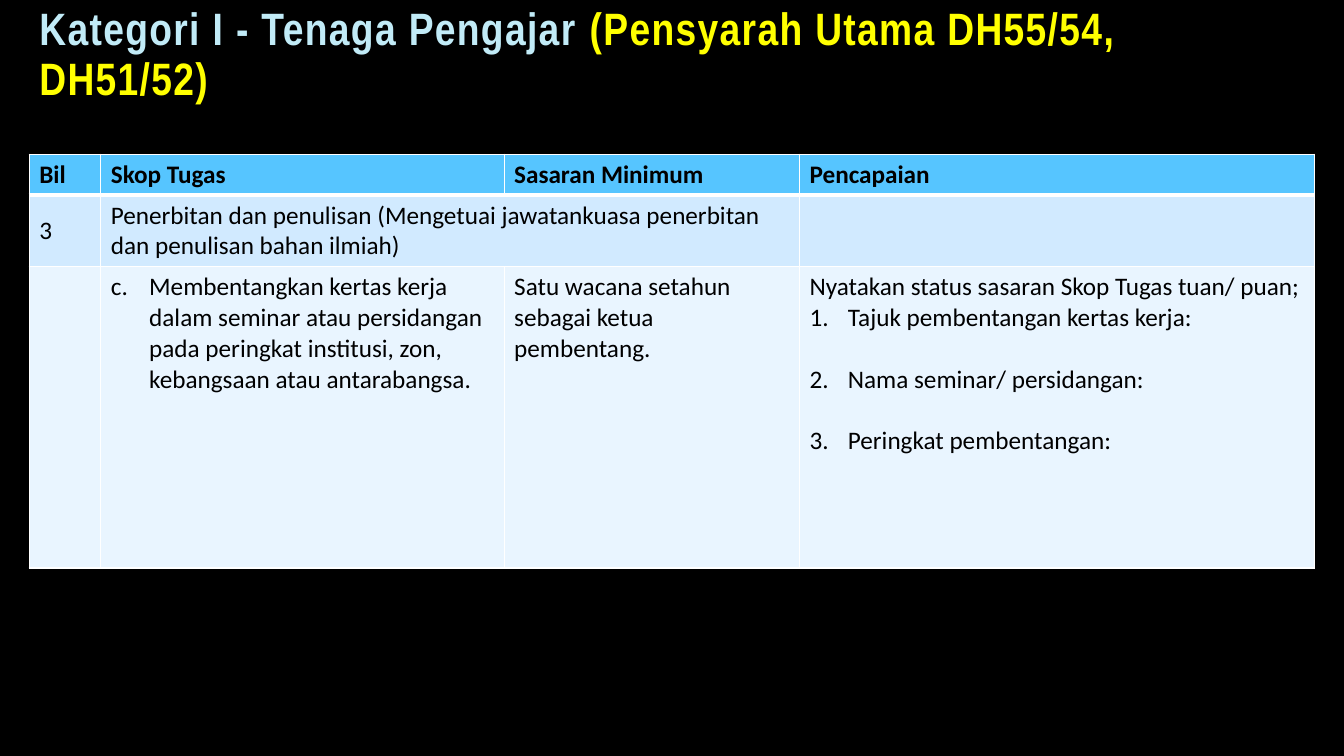
from lxml import etree
from pptx import Presentation
from pptx.dml.color import RGBColor
from pptx.enum.text import MSO_ANCHOR, MSO_AUTO_SIZE, PP_ALIGN
from pptx.oxml import parse_xml
from pptx.oxml.ns import nsdecls, qn
from pptx.util import Inches, Pt

COLORS = {
    "background": "000000", "text": "000000", "border": "FFFFFF",
    "title": "C1EBF7", "grade": "FFFF00", "outline": "404040",
    "header": "56C5FF", "topic": "D1EAFF", "detail": "E9F5FF",
}


def line_xml(tag, color, points, alpha=100):
    return parse_xml(
        f'<a:{tag} {nsdecls("a")} w="{int(Pt(points))}"><a:solidFill>'
        f'<a:srgbClr val="{COLORS[color]}"><a:alpha val="{alpha * 1000}"/></a:srgbClr>'
        f'</a:solidFill><a:prstDash val="solid"/></a:{tag}>')


def write_paragraph(paragraph, text, numbering=None, start=1, bold=False, gap=0):
    paragraph.text = text
    if numbering:
        properties = paragraph._p.get_or_add_pPr()
        properties.set("marL", str(Inches(0.38)))
        properties.set("indent", str(-Inches(0.38)))
        number = etree.SubElement(properties, qn("a:buAutoNum"), type=numbering)
        if start > 1:
            number.set("startAt", str(start))
    if gap:
        paragraph.space_before = Pt(gap)
    paragraph.font.name = "Calibri"
    paragraph.font.size = Pt(18)
    paragraph.font.bold = bold
    paragraph.font.color.rgb = RGBColor.from_string(COLORS["text"])


presentation = Presentation()
presentation.slide_width = Inches(13.33)
presentation.slide_height = Inches(7.5)
slide = presentation.slides.add_slide(presentation.slide_layouts[5])
slide.background.fill.solid()
slide.background.fill.fore_color.rgb = RGBColor.from_string(COLORS["background"])

title = slide.shapes.title
title.left, title.top = Inches(0.29), Inches(0.42)
title.width, title.height = Inches(11.37), Inches(0.67)
title.text_frame.word_wrap = True
title.text_frame.auto_size = MSO_AUTO_SIZE.NONE
title.text_frame.vertical_anchor = MSO_ANCHOR.BOTTOM
heading = title.text_frame.paragraphs[0]
heading.alignment = PP_ALIGN.LEFT
heading.line_spacing = 0.9
heading.font.name = "Arial Narrow"
heading.font.size = Pt(32.4)
heading.font.bold = True
for text, color in [("Kategori I - Tenaga Pengajar ", "title"),
                    ("(Pensyarah Utama DH55/54, DH51/52)", "grade")]:
    run = heading.add_run()
    run.text = text
    run.font.color.rgb = RGBColor.from_string(COLORS[color])
    run_properties = run._r.get_or_add_rPr()
    run_properties.set("spc", "100")
    run_properties.insert(0, line_xml("ln", "outline", 0.75, 10))

column_widths = [0.71, 4, 2.93, 5.11]
row_heights = [0.4, 0.7, 2.99]
table = slide.shapes.add_table(
    3, 4, Inches(0.29), Inches(1.53),
    Inches(sum(column_widths)), Inches(sum(row_heights))).table
table.first_row = False
table.horz_banding = False
for column, width in zip(table.columns, column_widths):
    column.width = Inches(width)
for row, height in zip(table.rows, row_heights):
    row.height = Inches(height)

row_styles = [("header", MSO_ANCHOR.MIDDLE, 1, 3),
              ("topic", MSO_ANCHOR.MIDDLE, 3, 1),
              ("detail", MSO_ANCHOR.TOP, 1, 1)]
for row, (color, anchor, top, bottom) in zip(table.rows, row_styles):
    for cell in row.cells:
        cell.fill.solid()
        cell.fill.fore_color.rgb = RGBColor.from_string(COLORS[color])
        cell.vertical_anchor = anchor
        borders = [("lnL", 1), ("lnR", 1), ("lnT", top), ("lnB", bottom)]
        for position, (tag, points) in enumerate(borders):
            cell._tc.get_or_add_tcPr().insert(position, line_xml(tag, "border", points))
table.cell(1, 1).merge(table.cell(1, 2))

for index, text in enumerate(["Bil", "Skop Tugas", "Sasaran Minimum", "Pencapaian"]):
    write_paragraph(table.cell(0, index).text_frame.paragraphs[0], text, bold=True)

write_paragraph(table.cell(1, 0).text_frame.paragraphs[0], "3")
write_paragraph(
    table.cell(1, 1).text_frame.paragraphs[0],
    "Penerbitan dan penulisan (Mengetuai jawatankuasa penerbitan dan penulisan bahan ilmiah)")
write_paragraph(
    table.cell(2, 1).text_frame.paragraphs[0],
    "Membentangkan kertas kerja dalam seminar atau persidangan pada peringkat institusi, "
    "zon, kebangsaan atau antarabangsa.", "alphaLcPeriod", start=3)
write_paragraph(table.cell(2, 2).text_frame.paragraphs[0],
                "Satu wacana setahun sebagai ketua pembentang.")

achievement = table.cell(2, 3).text_frame
write_paragraph(achievement.paragraphs[0], "Nyatakan status sasaran Skop Tugas tuan/ puan;")
for text, gap in [("Tajuk pembentangan kertas kerja:", 0),
                  ("Nama seminar/ persidangan:", 22),
                  ("Peringkat pembentangan:", 22)]:
    write_paragraph(achievement.add_paragraph(), text, "arabicPeriod", gap=gap)

presentation.save("out.pptx")
